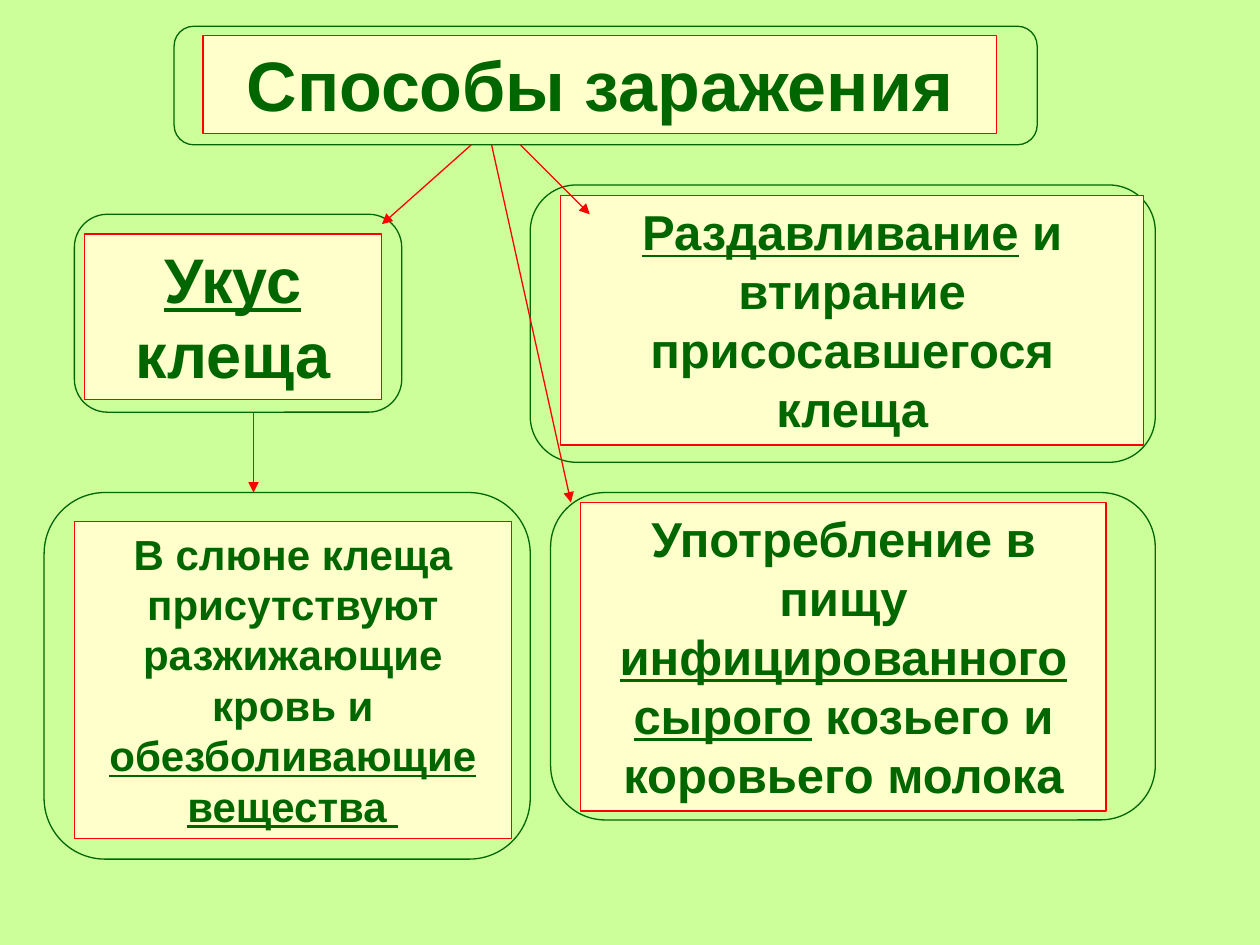
from lxml.etree import SubElement
from pptx import Presentation
from pptx.dml.color import RGBColor
from pptx.enum.shapes import MSO_CONNECTOR, MSO_SHAPE
from pptx.enum.text import MSO_ANCHOR, MSO_AUTO_SIZE, PP_ALIGN
from pptx.oxml.ns import qn
from pptx.util import Cm, Pt

LIGHT_GREEN = RGBColor(0xCC, 0xFF, 0x99)
DARK_GREEN = RGBColor(0x00, 0x66, 0x00)
CREAM = RGBColor(0xFF, 0xFF, 0xCC)
RED = RGBColor(0xFF, 0x00, 0x00)
LINE_WIDTH = Pt(0.75)


def write_text(shape, runs, size, color=DARK_GREEN, font="Arial", bold=True):
    """Fill a shape with one centred paragraph of (text, underlined) runs."""
    text_frame = shape.text_frame
    text_frame.word_wrap = True
    text_frame.auto_size = MSO_AUTO_SIZE.NONE
    text_frame.vertical_anchor = MSO_ANCHOR.TOP
    paragraph = text_frame.paragraphs[0]
    paragraph.alignment = PP_ALIGN.CENTER
    paragraph.line_spacing = 1.0
    paragraph.space_before = Pt(0)
    for text, underlined in runs:
        run = paragraph.add_run()
        run.text = text
        run.font.name = font
        run.font.size = Pt(size)
        run.font.bold = bold
        run.font.underline = underlined
        run.font.color.rgb = color


presentation = Presentation()
presentation.slide_width = Cm(25.4)
presentation.slide_height = Cm(19.05)
slide = presentation.slides.add_slide(presentation.slide_layouts[5])
slide.background.fill.solid()
slide.background.fill.fore_color.rgb = LIGHT_GREEN

# Rounded frames: left, top, width, height
frames = [
    (3.51, 0.53, 17.4, 2.39),
    (1.5, 4.32, 6.6, 3.99),
    (10.69, 3.73, 12.6, 5.59),
    (11.1, 9.93, 12.19, 6.6),
    (0.89, 9.93, 9.8, 7.39),
]
for box in frames:
    frame = slide.shapes.add_shape(MSO_SHAPE.ROUNDED_RECTANGLE, *map(Cm, box))
    frame.shadow.inherit = False
    frame.fill.background()
    frame.line.color.rgb = DARK_GREEN
    frame.line.width = LINE_WIDTH

# Cream labels: box, text size, runs; the first one is the title
labels = [
    ((4.09, 0.71, 16, 1.98), 40, [("Способы заражения", False)]),
    ((1.7, 4.72, 5.99, 3.33), 36, [("Укус ", True), ("клеща", False)]),
    ((11.3, 3.94, 11.76, 5.03), 28,
     [("Раздавливание", True), (" и втирание присосавшегося клеща", False)]),
    ((11.71, 10.13, 10.59, 6.22), 28,
     [("Употребление в пищу ", False), ("инфицированного сырого", True),
      (" козьего и коровьего молока", False)]),
    ((1.5, 10.52, 8.81, 6.38), 24,
     [("В слюне клеща присутствуют разжижающие кровь и ", False),
      ("обезболивающие вещества ", True)]),
]
for index, (box, size, runs) in enumerate(labels):
    left, top, width, height = map(Cm, box)
    if index == 0:
        label = slide.shapes.title
        label.left, label.top, label.width, label.height = left, top, width, height
    else:
        label = slide.shapes.add_shape(MSO_SHAPE.RECTANGLE, left, top, width, height)
        label.shadow.inherit = False
    label.fill.solid()
    label.fill.fore_color.rgb = CREAM
    label.line.color.rgb = RED
    label.line.width = LINE_WIDTH
    write_text(label, runs, size)

# Arrows: start x, start y, end x, end y
arrows = [
    (5.11, 8.33, 5.11, 9.93),
    (9.5, 2.92, 7.7, 4.52),
    (9.91, 2.92, 11.51, 10.13),
    (10.49, 2.92, 11.89, 4.32),
]
for ends in arrows:
    arrow = slide.shapes.add_connector(MSO_CONNECTOR.STRAIGHT, *map(Cm, ends))
    arrow.line.color.rgb = RED
    arrow.line.width = LINE_WIDTH
    SubElement(arrow.line._get_or_add_ln(), qn("a:tailEnd"), type="triangle")
    SubElement(arrow._element.spPr, qn("a:effectLst"))

presentation.save("out.pptx")
